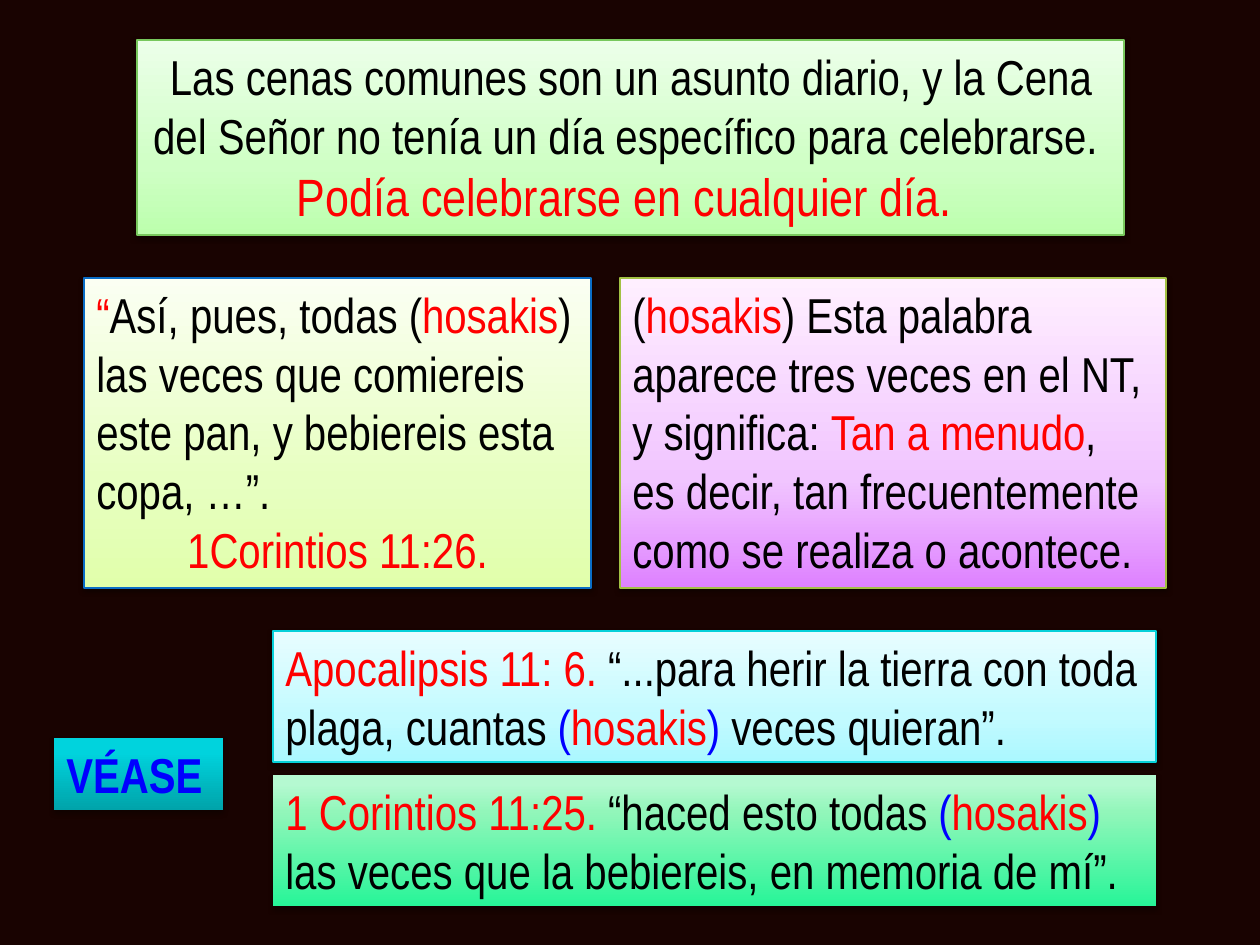
import pptx
import pptx.dml.color
import pptx.enum.shapes
import pptx.enum.text
import pptx.oxml.ns
import pptx.util
from lxml import etree

RGB = pptx.dml.color.RGBColor
ALIGN = pptx.enum.text.PP_ALIGN
qn = pptx.oxml.ns.qn

BACKGROUND = RGB(0x19, 0x03, 0x01)
BLACK = RGB(0, 0, 0)
RED = RGB(0xFF, 0, 0)
BLUE = RGB(0, 0, 0xFF)
GREEN_EDGE = RGB(0x78, 0xC8, 0x5D)
BLUE_EDGE = RGB(0x0A, 0x6D, 0xC6)
OLIVE_EDGE = RGB(0xA3, 0xC1, 0x44)
CYAN_EDGE = RGB(0x06, 0xD0, 0xD9)

# Gradient stops, from the bottom of a box to its top
GREEN = [(0, RGB(0xBC, 0xFF, 0xAD)), (35, RGB(0xCF, 0xFF, 0xC5)), (100, RGB(0xEC, 0xFF, 0xE9))]
LIME = [(0, RGB(0xE1, 0xFF, 0xAB)), (35, RGB(0xE7, 0xFF, 0xC1)), (100, RGB(0xFB, 0xFF, 0xF3))]
VIOLET = [(0, RGB(0xDE, 0x81, 0xFF)), (35, RGB(0xF1, 0xC5, 0xFF)), (100, RGB(0xFF, 0xEF, 0xFF))]
MINT = [(0, RGB(0x27, 0xF5, 0x98)), (72, RGB(0x92, 0xF6, 0xBA)), (93, RGB(0xB5, 0xF9, 0xD1))]
CYAN = [(0, RGB(0xAB, 0xF8, 0xFF)), (35, RGB(0xC3, 0xFA, 0xFF)), (100, RGB(0xE8, 0xFD, 0xFF))]
TEAL = [(0, RGB(0x00, 0xA3, 0xAA)), (80, RGB(0x00, 0xD3, 0xDD)), (100, RGB(0x00, 0xD4, 0xDE))]


def px(length):
    return pptx.util.Emu(round(length * 914400 / 126))


def add_color(parent, color):
    return etree.SubElement(parent, qn("a:srgbClr"), val=str(color))


class Board:
    """Holds the text style and the current slide."""

    font = "Arial Narrow"
    size = 28

    def __init__(self, slide):
        self.slide = slide

    def background(self, color):
        fill = self.slide.background.fill
        fill.solid()
        fill.fore_color.rgb = color

    def box(self, left, top, width, height, stops, edge=None):
        box = self.slide.shapes.add_shape(
            pptx.enum.shapes.MSO_SHAPE.RECTANGLE, px(left), px(top), px(width), px(height))
        self.gradient(box, stops)
        if edge is None:
            box.line.fill.background()
        else:
            box.line.color.rgb = edge
            box.line.width = pptx.util.Pt(0.75)
        self.shadow(box, opacity=35 if edge is None else 38)
        frame = box.text_frame
        frame.word_wrap = True
        frame.auto_size = pptx.enum.text.MSO_AUTO_SIZE.SHAPE_TO_FIT_TEXT
        frame.vertical_anchor = pptx.enum.text.MSO_ANCHOR.TOP
        return frame

    def gradient(self, box, stops):
        box.fill.gradient()
        box.fill.gradient_angle = 90
        stop_list = next(box._element.spPr.iter(qn("a:gsLst")))
        for default_stop in list(stop_list):
            stop_list.remove(default_stop)
        for position, color in stops:
            add_color(etree.SubElement(stop_list, qn("a:gs"), pos=str(position * 1000)), color)

    def shadow(self, box, opacity):
        box.shadow.inherit = False
        effects = box._element.spPr.find(qn("a:effectLst"))
        outer = etree.SubElement(
            effects, qn("a:outerShdw"), blurRad="40000", dist="20000", dir="5400000", rotWithShape="0")
        etree.SubElement(add_color(outer, BLACK), qn("a:alpha"), val=str(opacity * 1000))

    def paragraph(self, frame, runs, align=ALIGN.LEFT, size=size, bold=False, outline=1.5):
        first = frame.paragraphs[0]
        paragraph = frame.add_paragraph() if first.runs else first
        paragraph.alignment = align
        for text, color in runs:
            run = paragraph.add_run()
            run.text = text
            run.font.name = self.font
            run.font.size = pptx.util.Pt(size)
            run.font.bold = bold
            run.font.color.rgb = color
            self.outline(run, color, outline)

    def outline(self, run, color, width):
        line = etree.Element(qn("a:ln"), w=str(pptx.util.Pt(width)))
        add_color(etree.SubElement(line, qn("a:solidFill")), color)
        run.font._element.insert(0, line)


def main():
    deck = pptx.Presentation()
    deck.slide_width, deck.slide_height = px(1260), px(945)
    board = Board(deck.slides.add_slide(deck.slide_layouts[6]))
    board.background(BACKGROUND)

    # Main statement
    statement = board.box(137, 40, 987, 195, GREEN, GREEN_EDGE)
    board.paragraph(statement, [
        ("Las cenas comunes son un asunto diario, y la Cena del Señor no tenía "
         "un día específico para celebrarse. ", BLACK)], ALIGN.CENTER)
    board.paragraph(statement, [("Podía celebrarse en cualquier día. ", RED)], ALIGN.CENTER, size=30)

    # Verse and the meaning of its key word
    verse = board.box(84, 278, 507, 310, LIME, BLUE_EDGE)
    board.paragraph(verse, [
        ("“", RED), ("Así, pues, todas (", BLACK), ("hosakis", RED),
        (") las veces que comiereis este pan, y bebiereis esta copa, …”.", BLACK)])
    board.paragraph(verse, [(" ", BLACK), ("1Corintios 11:26. ", RED)], ALIGN.CENTER)

    meaning = board.box(620, 278, 546, 310, VIOLET, OLIVE_EDGE)
    board.paragraph(meaning, [
        ("(", BLACK), ("hosakis", RED),
        (") Esta palabra aparece tres veces en el NT, y significa: ", BLACK),
        ("Tan a menudo", RED), (",", BLACK)])
    board.paragraph(meaning, [("es decir, tan frecuentemente como se realiza o acontece.", BLACK)])

    # Other passages with the key word
    passages = [
        (775, MINT, None, "1 Corintios 11:25. ", "“haced esto todas ",
         "las veces que la bebiereis, en memoria de mí”."),
        (631, CYAN, CYAN_EDGE, "Apocalipsis 11: 6. ",
         "“...para herir la tierra con toda plaga, cuantas ", "veces quieran”."),
    ]
    for top, stops, edge, reference, before, after in passages:
        passage = board.box(273, top, 883, 131, stops, edge)
        board.paragraph(passage, [
            (reference, RED), (before, BLACK), ("(", BLUE), ("hosakis", RED), (") ", BLUE), (after, BLACK)])

    # Pointer to the passages
    see_also = board.box(54, 738, 169, 72, TEAL)
    board.paragraph(see_also, [("VÉASE", BLUE)], bold=True, outline=0.25)

    deck.save("out.pptx")


if __name__ == "__main__":
    main()
